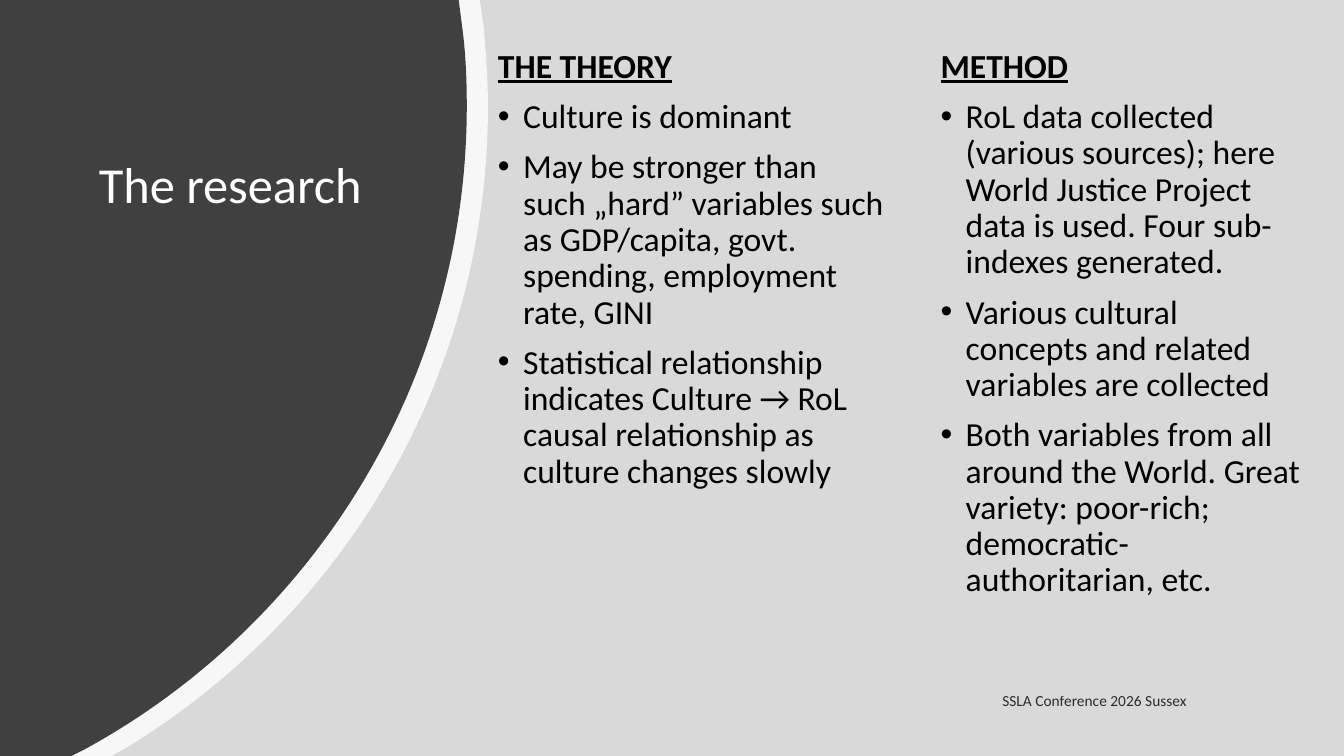
from lxml.etree import SubElement
from pptx import Presentation
from pptx.dml.color import RGBColor
from pptx.enum.shapes import MSO_SHAPE
from pptx.enum.text import MSO_ANCHOR, MSO_AUTO_SIZE, PP_ALIGN
from pptx.oxml.ns import qn
from pptx.util import Inches, Pt

WIDTH, HEIGHT = 13.33, 7.5
FONT = "Calibri"
COLORS = {"ground": "D9D9D9", "band": "FFFFFF", "panel": "404040",
          "title": "FFFFFF", "text": "000000"}
UNITS = 1000  # outline units per inch


def style_text(para, size, color):
    for span in para.runs:
        span.font.name = FONT
        span.font.size = Pt(size)
        span.font.color.rgb = RGBColor.from_string(COLORS[color])


def set_opacity(element, percent):
    for color in element.iter(qn("a:srgbClr")):
        SubElement(color, qn("a:alpha")).set("val", str(percent * 1000))


deck = Presentation()
deck.slide_width, deck.slide_height = Inches(WIDTH), Inches(HEIGHT)
page = deck.slides.add_slide(deck.slide_layouts[5])

# Grey ground
ground = page.shapes.add_shape(MSO_SHAPE.RECTANGLE, 0, 0,
                               deck.slide_width, deck.slide_height)
ground.shadow.inherit = False
ground.fill.solid()
ground.fill.fore_color.rgb = RGBColor.from_string(COLORS["ground"])
ground.line.fill.background()

# Curved band and dark panel: top edge, two cubic arcs, bottom edge
outlines = [
    ("band", 80, [(4.76, 0), (4.8, 0.29),
                  (4.82, 0.54), (4.84, 0.8), (4.84, 1.05),
                  (4.84, 3.75), (3.4, 6.11), (1.25, 7.42),
                  (1.11, HEIGHT), (0, HEIGHT)]),
    ("panel", 100, [(4.55, 0), (4.59, 0.31),
                    (4.62, 0.55), (4.63, 0.8), (4.63, 1.05),
                    (4.63, 3.81), (3.09, 6.21), (0.83, 7.44),
                    (0.71, HEIGHT), (0, HEIGHT)]),
]
for color, opacity, points in outlines:
    builder = page.shapes.build_freeform(0, 0, scale=Inches(1) / UNITS)
    builder.add_line_segments([(round(x * UNITS), round(y * UNITS))
                               for x, y in points], close=True)
    shape = builder.convert_to_shape()
    shape.shadow.inherit = False
    shape.fill.solid()
    shape.fill.fore_color.rgb = RGBColor.from_string(COLORS[color])
    shape.line.fill.background()
    if opacity < 100:
        set_opacity(shape._element.spPr, opacity)

    # Points 2-4 and 5-7 become the two cubic arcs
    segments = list(shape._element.iter(qn("a:lnTo")))
    for first in (2, 5):
        arc = segments[first]
        arc.tag = qn("a:cubicBezTo")
        for segment in segments[first + 1:first + 3]:
            arc.append(segment[0])
            segment.getparent().remove(segment)

# Title, brought in front of the panel
title = page.shapes.title
page.shapes._spTree.append(title._element)
title.left, title.top = Inches(0.88), Inches(1.54)
title.width, title.height = Inches(3.14), Inches(2.36)
title.text_frame.text = "The research"
title.text_frame.vertical_anchor = MSO_ANCHOR.TOP
title.text_frame.auto_size = MSO_AUTO_SIZE.NONE
heading = title.text_frame.paragraphs[0]
heading.alignment = PP_ALIGN.LEFT
heading.line_spacing = 0.9
style_text(heading, 36, "title")

# Two text columns: underlined heading, then bullets
columns = [
    (4.84, 4.05, 6.52, [
        "THE THEORY",
        "Culture is dominant",
        "May be stronger than such „hard” variables such as GDP/capita, "
        "govt. spending, employment rate, GINI",
        "Statistical relationship indicates Culture → RoL causal "
        "relationship as culture changes slowly"]),
    (9.23, 3.82, 6.31, [
        "METHOD",
        "RoL data collected (various sources); here World Justice Project "
        "data is used. Four sub-indexes generated.",
        "Various cultural concepts and related variables are collected",
        "Both variables from all around the World. Great variety: "
        "poor-rich; democratic-authoritarian, etc."]),
]
for left, width, height, lines in columns:
    box = page.shapes.add_textbox(Inches(left), Inches(0.44),
                                  Inches(width), Inches(height))
    frame = box.text_frame
    frame.word_wrap = True
    for index, line in enumerate(lines):
        para = frame.paragraphs[0] if index == 0 else frame.add_paragraph()
        para.text = line
        para.line_spacing = 0.9
        if index:
            para.space_before = Pt(10)
            props = para._p.get_or_add_pPr()
            props.set("marL", str(Inches(0.25)))
            props.set("indent", str(-Inches(0.25)))
            SubElement(props, qn("a:buFont")).set("typeface", "Arial")
            SubElement(props, qn("a:buChar")).set("char", "•")
        else:
            para.runs[0].font.bold = True
            para.runs[0].font.underline = True
        style_text(para, 24, "text")

# Conference line
footer = page.shapes.add_textbox(Inches(4.6), Inches(6.75), Inches(7.27), Inches(0.4))
footer.text_frame.word_wrap = True
footer.text_frame.vertical_anchor = MSO_ANCHOR.MIDDLE
para = footer.text_frame.paragraphs[0]
para.text = "SSLA Conference 2026 Sussex"
para.alignment = PP_ALIGN.RIGHT
para.space_after = Pt(6)
style_text(para, 11, "text")
set_opacity(para._p, 80)

deck.save("out.pptx")
